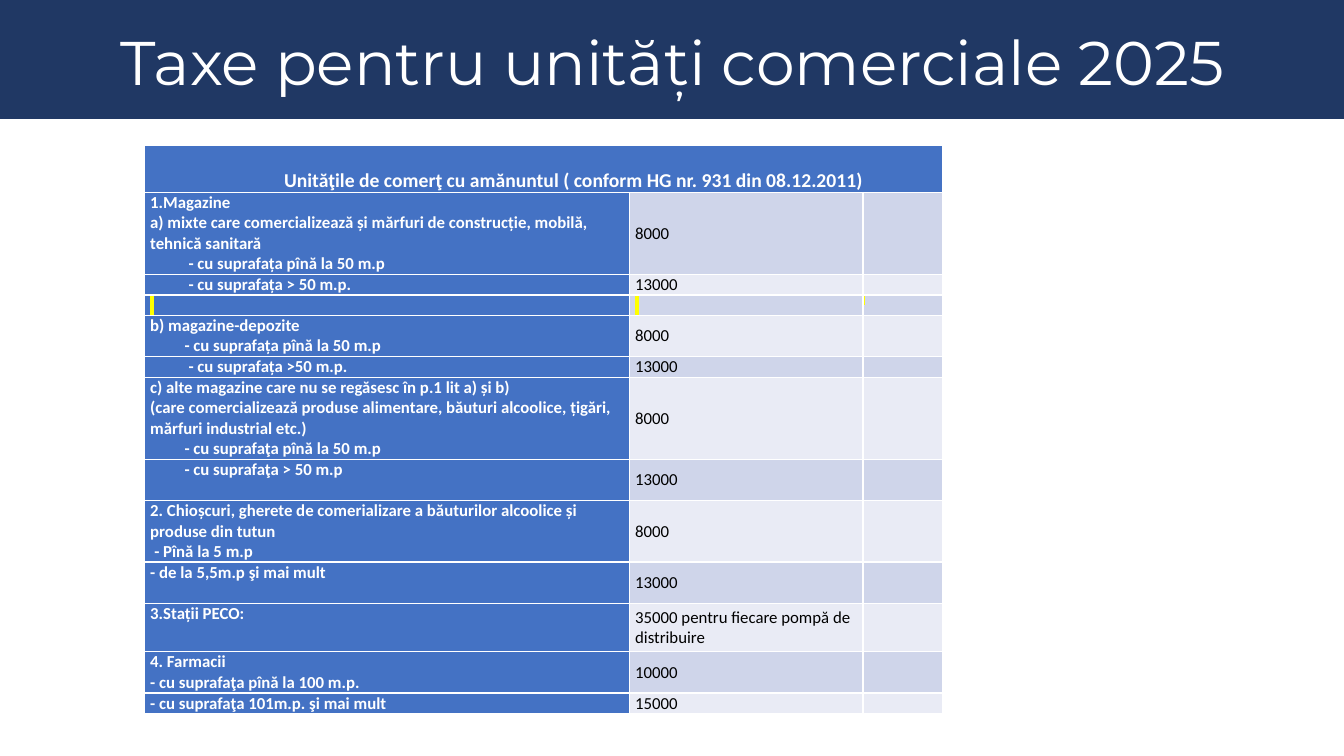
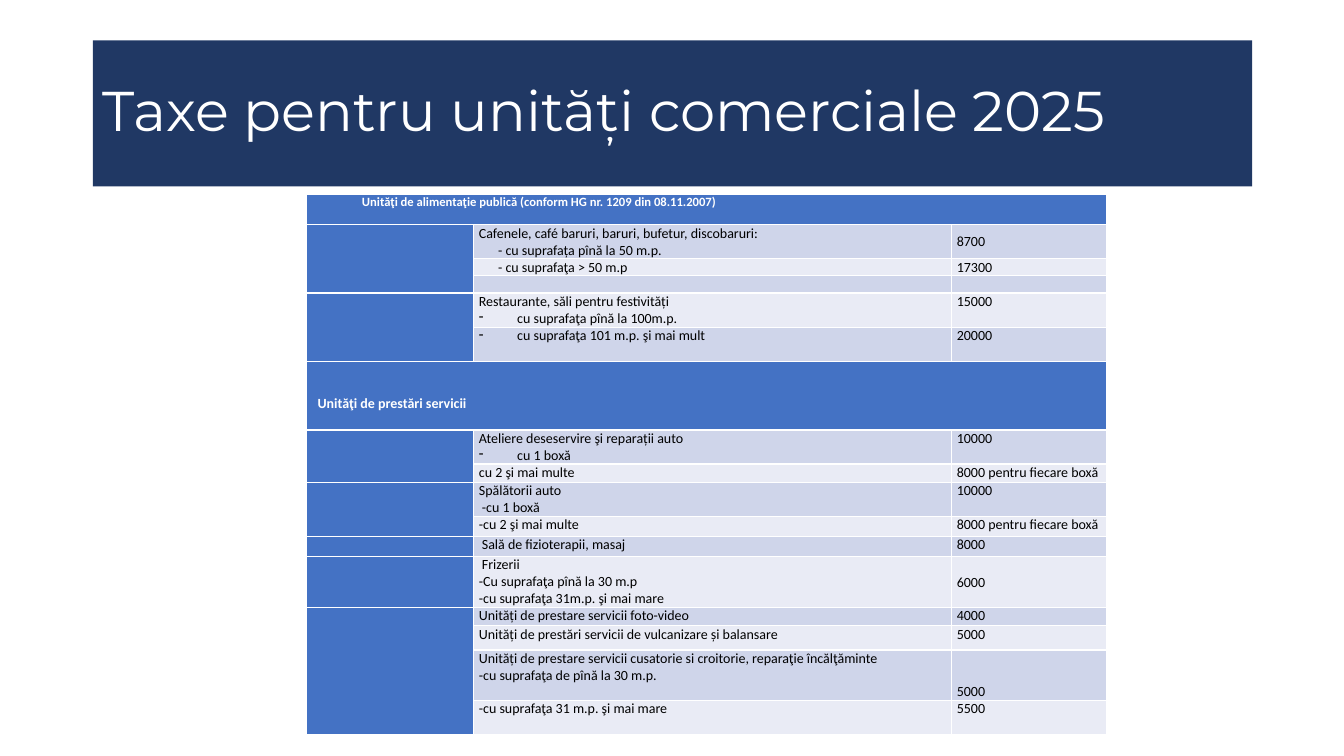
from lxml.etree import SubElement
from pptx import Presentation
from pptx.dml.color import RGBColor
from pptx.enum.shapes import MSO_SHAPE
from pptx.enum.text import MSO_ANCHOR as Anchor, MSO_AUTO_SIZE as AutoSize, PP_ALIGN as Align
from pptx.oxml import parse_xml
from pptx.oxml.ns import nsdecls, qn
from pptx.util import Inches, Pt

NAVY = RGBColor(0x20, 0x38, 0x64)
BLUE = RGBColor(0x44, 0x72, 0xC4)
BAND_DARK = RGBColor(0xCF, 0xD5, 0xEA)
BAND_LIGHT = RGBColor(0xE9, 0xEB, 0xF5)
WHITE = RGBColor(0xFF, 0xFF, 0xFF)
BLACK = RGBColor(0, 0, 0)
TITLE = "Taxe pentru unități comerciale 2025"
TITLE_FONT, BODY_FONT = "Montserrat", "Calibri"
HANGING = 0.38

RETAIL_HEADER = "Unităţile de comerţ cu amănuntul ( conform HG nr. 931 din 08.12.2011)"
RETAIL_HEIGHT = 0.47
RETAIL_ROWS = [
    (0.81, ["1.Magazine",
            "a) mixte care comercializează și mărfuri de construcție, mobilă, tehnică sanitară",
            (0.38, "- cu suprafața pînă la 50 m.p")], "8000"),
    (0.2, [(0.38, "- cu suprafața > 50 m.p.")], "13000"),
    (0.2, [], ""),
    (0.41, ["b) magazine-depozite", (0.34, "- cu suprafața pînă la 50 m.p")], "8000"),
    (0.2, [(0.38, "- cu suprafața >50 m.p.")], "13000"),
    (0.81, ["c) alte magazine care nu se regăsesc în p.1 lit a) și b)",
            "(care comercializează produse alimentare, băuturi alcoolice, țigări, mărfuri industrial etc.)",
            (0.34, "- cu suprafaţa pînă la 50 m.p")], "8000"),
    (0.41, [(0.34, "- cu suprafaţa > 50 m.p")], "13000"),
    (0.61, ["2. Chioșcuri, gherete de comerializare a băuturilor alcoolice și produse din tutun",
            (0.04, "- Pînă la 5 m.p")], "8000"),
    (0.41, ["- de la 5,5m.p şi mai mult"], "13000"),
    (0.48, ["3.Stații PECO:"], "35000 pentru fiecare pompă de distribuire"),
    (0.41, ["4. Farmacii", "- cu suprafaţa pînă la 100 m.p."], "10000"),
    (0.2, ["- cu suprafaţa 101m.p. şi mai mult"], "15000"),
]
HIGHLIGHTED_ROW = 3

CATERING_HEADER = "Unităţi de alimentaţie publică (conform HG nr. 1209 din 08.11.2007)"
SERVICES_HEADER = "Unităţi de prestări servicii"
CATERING_HEIGHT, SERVICES_HEIGHT = 0.3, 0.68
CATERING_ROWS = [
    (0.33, ["Cafenele, café baruri, baruri, bufetur, discobaruri:",
            (0.19, "- cu suprafața pînă la 50 m.p.")], "8700", Anchor.MIDDLE),
    (0.17, [(0.19, "- cu suprafaţa > 50 m.p")], "17300", Anchor.TOP),
    (0.17, [], "", Anchor.TOP),
    (0.34, ["Restaurante, săli pentru festivități",
            (HANGING, "cu suprafaţa pînă la 100m.p.", "-")], "15000", Anchor.TOP),
    (0.34, [(HANGING, "cu suprafaţa 101 m.p. şi mai mult", "-")], "20000", Anchor.TOP),
]
SERVICES_ROWS = [
    (0.33, ["Ateliere deseservire şi reparații auto", (HANGING, "cu 1 boxă", "-")],
     "10000", Anchor.TOP),
    (0.18, ["cu 2 şi mai multe"], "8000 pentru fiecare boxă", Anchor.TOP),
    (0.34, ["Spălătorii auto", (0.03, "-cu 1 boxă")], "10000", Anchor.TOP),
    (0.2, ["-cu 2 şi mai multe"], "8000 pentru fiecare boxă", Anchor.TOP),
    (0.2, [(0.03, "Sală de fizioterapii, masaj")], "8000", Anchor.TOP),
    (0.5, [(0.03, "Frizerii"), "-Cu suprafaţa pînă la 30 m.p",
           "-cu suprafaţa 31m.p. şi mai mare"], "6000", Anchor.MIDDLE),
    (0.18, ["Unități de prestare servicii foto-video"], "4000", Anchor.TOP),
    (0.24, ["Unități de prestări servicii de vulcanizare și balansare"], "5000", Anchor.TOP),
    (0.5, ["Unități de prestare servicii cusatorie si croitorie, reparaţie încălţăminte",
           "-cu suprafaţa de pînă la 30 m.p."], "5000", Anchor.BOTTOM),
    (0.34, ["-cu suprafaţa 31 m.p. şi mai mare"], "5500", Anchor.TOP),
]
GROUPS = [(1, 3), (4, 5), (7, 8), (9, 10), (13, 16)]


def place_title(slide, box, size, align):
    """Place the slide title in the given box, in front of the other parts."""
    title = slide.shapes.title
    title.left, title.top, title.width, title.height = map(Inches, box)
    frame = title.text_frame
    frame.text = TITLE
    frame.word_wrap = True
    frame.auto_size = AutoSize.NONE
    frame.vertical_anchor = Anchor.MIDDLE
    heading = frame.paragraphs[0]
    heading.alignment = align
    heading.line_spacing = 0.9
    font = heading.runs[0].font
    font.name, font.size, font.color.rgb = TITLE_FONT, Pt(size), WHITE
    slide.shapes._spTree.append(title._element)
    return title


def paint(area, color):
    """Give a shape or a cell a solid fill."""
    area.fill.solid()
    area.fill.fore_color.rgb = color


def indent_line(paragraph, indent, bullet):
    """Indent a paragraph, hanging it after a bullet if there is one."""
    properties = paragraph._p.get_or_add_pPr()
    properties.set("marL", str(Inches(indent)))
    if bullet:
        properties.set("indent", str(-Inches(indent)))
        SubElement(properties, qn("a:buChar")).set("char", bullet)


def write_cell(cell, lines, size, color, inset, bold=False, anchor=Anchor.TOP):
    """Write lines, each a text or (indent, text, bullet), in a cell."""
    cell.margin_left = cell.margin_right = Inches(inset)
    cell.margin_top = cell.margin_bottom = 0
    cell.vertical_anchor = anchor
    lines = [(0, line) if isinstance(line, str) else line for line in lines]
    frame = cell.text_frame
    frame.text = "\n".join(line[1] for line in lines)
    for paragraph, (indent, _, *bullet) in zip(frame.paragraphs, lines):
        if indent:
            indent_line(paragraph, indent, "".join(bullet))
        for run in paragraph.runs:
            font = run.font
            font.size, font.bold = Pt(size), bold
            font.color.rgb, font.name = color, BODY_FONT
    if not lines:
        SubElement(frame.paragraphs[0]._p, qn("a:endParaRPr")).set("sz", str(size * 100))


def highlight_cell(cell, size, inset):
    """Show a narrow yellow highlight at the start of a cell."""
    write_cell(cell, [" "], size, BLACK, inset)
    properties = cell.text_frame.paragraphs[0].runs[0]._r.get_or_add_rPr()
    properties.insert(1, parse_xml(
        f'<a:highlight {nsdecls("a")}><a:srgbClr val="FFFF00"/></a:highlight>'))


def add_fee_table(slide, left, top, widths, heights, size, inset):
    """Add an empty fee table with a blue first column and banded rows."""
    fees = slide.shapes.add_table(
        len(heights), len(widths), Inches(left), Inches(top),
        Inches(sum(widths)), Inches(sum(heights))).table
    for column, width in zip(fees.columns, widths):
        column.width = Inches(width)
    for index, (row, height) in enumerate(zip(fees.rows, heights)):
        row.height = Inches(height)
        for position, cell in enumerate(row.cells):
            band = BAND_DARK if index % 2 else BAND_LIGHT
            paint(cell, BLUE if position == 0 else band)
            write_cell(cell, [], size, BLACK, inset)
    return fees


def write_header(fees, index, text, size, inset, anchor=Anchor.TOP):
    """Merge a row of the table into a blue section header."""
    header = fees.cell(index, 0)
    header.merge(fees.cell(index, len(fees.columns) - 1))
    for cell in fees.rows[index].cells:
        paint(cell, BLUE)
    write_cell(header, [text], size, WHITE, inset, True, anchor)
    return header


def build_retail(slide):
    """Build the slide with the fees of retail units."""
    band = slide.shapes.add_shape(MSO_SHAPE.RECTANGLE, 0, 0, Inches(13.33), Inches(1.18))
    band.shadow.inherit = False
    paint(band, NAVY)
    band.line.fill.background()
    size, inset = 12, 0.06
    heights = [RETAIL_HEIGHT] + [row[0] for row in RETAIL_ROWS]
    fees = add_fee_table(slide, 1.43, 1.44, [4.81, 2.32, 0.79], heights, size, inset)
    header = write_header(fees, 0, RETAIL_HEADER, 14, inset, Anchor.BOTTOM)
    header.margin_left = Inches(0.66)
    header.text_frame.paragraphs[0].alignment = Align.CENTER
    for index, (_, unit, fee) in enumerate(RETAIL_ROWS, 1):
        if index == HIGHLIGHTED_ROW:
            for position, (mark, margin) in enumerate([(size, inset), (size, inset), (6, 0)]):
                highlight_cell(fees.cell(index, position), mark, margin)
            continue
        write_cell(fees.cell(index, 0), unit, size, WHITE, inset, True)
        write_cell(fees.cell(index, 1), [fee], size, BLACK, inset, False, Anchor.MIDDLE)
    place_title(slide, (0.17, 0.25, 13, 0.81), 44, Align.CENTER)


def build_services(slide):
    """Build the slide with the fees of catering and service units."""
    size, inset = 10, 0.05
    heights = [CATERING_HEIGHT, *(row[0] for row in CATERING_ROWS),
               SERVICES_HEIGHT, *(row[0] for row in SERVICES_ROWS)]
    fees = add_fee_table(slide, 3.04, 1.93, [1.66, 4.74, 1.54], heights, size, inset)
    services_start = len(CATERING_ROWS) + 1
    catering = write_header(fees, 0, CATERING_HEADER, 9, inset)
    catering.margin_left = Inches(0.55)
    services = write_header(fees, services_start, SERVICES_HEADER, size, inset)
    services.margin_left, services.margin_top = Inches(0.11), Inches(0.34)
    for start, rows in ((1, CATERING_ROWS), (services_start + 1, SERVICES_ROWS)):
        for index, (_, unit, fee, anchor) in enumerate(rows, start):
            if unit:
                write_cell(fees.cell(index, 1), unit, size, BLACK, inset)
                write_cell(fees.cell(index, 2), [fee], size, BLACK, inset, False, anchor)
    for first, last in GROUPS:
        fees.cell(first, 0).merge(fees.cell(last, 0))
    title = place_title(slide, (0.92, 0.4, 11.5, 1.45), 40, Align.LEFT)
    paint(title, NAVY)


def main():
    """Build and save the presentation."""
    deck = Presentation()
    deck.slide_width, deck.slide_height = Inches(13.33), Inches(7.5)
    for build in (build_retail, build_services):
        build(deck.slides.add_slide(deck.slide_layouts[5]))
    deck.save("out.pptx")


if __name__ == "__main__":
    main()
